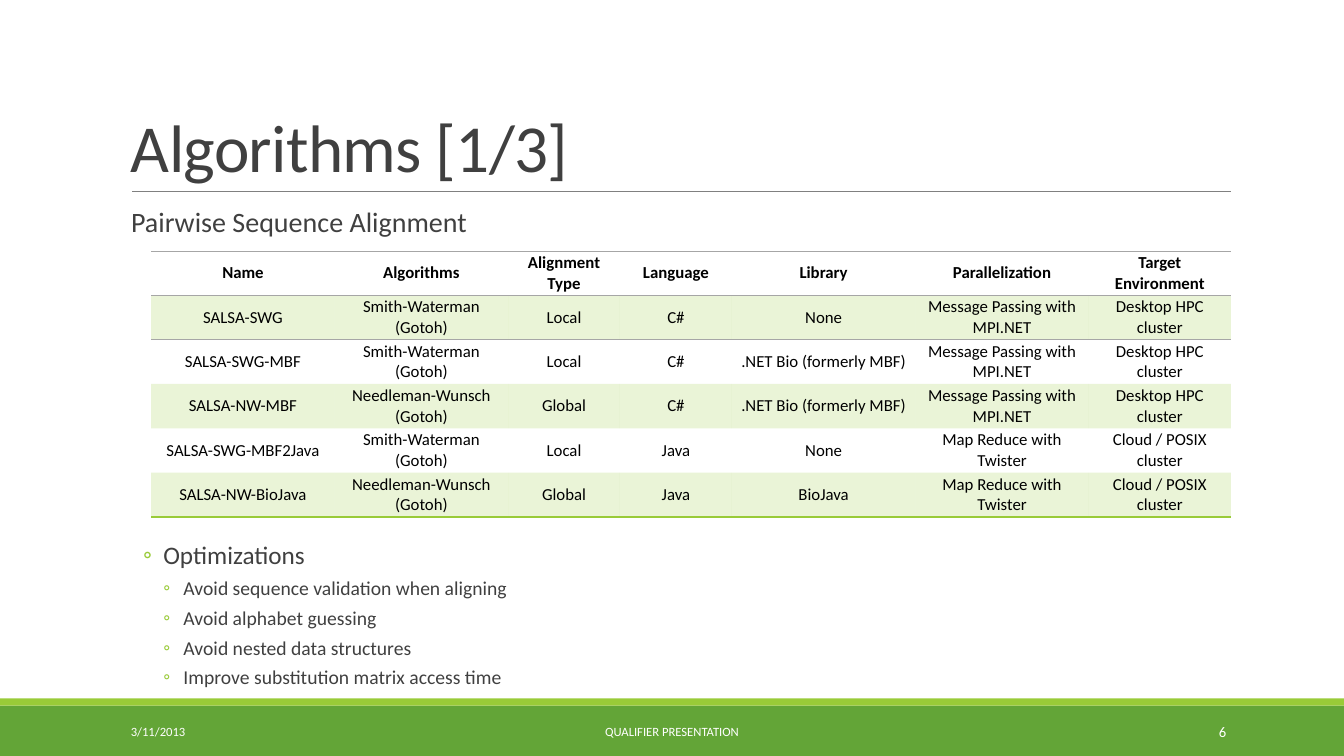
"""Build the pairwise sequence alignment algorithms slide."""
import pptx
import pptx.util
import pptx.dml.color
import pptx.enum.shapes
import pptx.enum.text
import pptx.oxml
import pptx.oxml.ns
import lxml.etree

Inches = pptx.util.Inches
Pt = pptx.util.Pt
qn = pptx.oxml.ns.qn
ALIGN = pptx.enum.text.PP_ALIGN
ANCHOR = pptx.enum.text.MSO_ANCHOR
COLORS = {"green": "63A537", "lime": "99CB38", "gray": "808080", "rule": "A6A6A6",
          "text": "404040", "black": "000000", "white": "FFFFFF"}


def add_span(para, text, size, color, bold=False):
    span = para.add_run()
    span.text = text
    span.font.name = "Calibri"
    span.font.size = Pt(size)
    span.font.bold = bold
    span.font.color.rgb = pptx.dml.color.RGBColor.from_string(COLORS[color])
    return span


def add_box(left, top, width, height, anchor, inset):
    box = page.shapes.add_textbox(Inches(left), Inches(top), Inches(width), Inches(height))
    frame = box.text_frame
    frame.word_wrap = True
    frame.vertical_anchor = anchor
    frame.margin_left = frame.margin_right = Inches(inset)
    return frame


deck = pptx.Presentation()
deck.slide_width, deck.slide_height = Inches(13.33), Inches(7.5)
page = deck.slides.add_slide(deck.slide_layouts[6])

for top, height, color in [(7, 0.5, "green"), (6.93, 0.07, "lime")]:
    band = page.shapes.add_shape(pptx.enum.shapes.MSO_SHAPE.RECTANGLE,
                                 0, Inches(top), deck.slide_width, Inches(height))
    band.shadow.inherit = False
    band.fill.solid()
    band.fill.fore_color.rgb = pptx.dml.color.RGBColor.from_string(COLORS[color])
    band.line.fill.background()

rule = page.shapes.add_connector(pptx.enum.shapes.MSO_CONNECTOR.STRAIGHT,
                                 Inches(1.31), Inches(1.9), Inches(12.21), Inches(1.9))
rule.line.color.rgb = pptx.dml.color.RGBColor.from_string(COLORS["gray"])
rule.line.width = Pt(0.5)
lxml.etree.SubElement(rule._element.spPr, qn("a:effectLst"))

title = add_box(1.2, 0.31, 11, 1.59, ANCHOR.BOTTOM, 0.1).paragraphs[0]
title.line_spacing = 0.85
span = add_span(title, "Algorithms [1/3]", 48, "text")
span.font._element.set("spc", "-50")

heading = add_box(1.3, 2.02, 10.9, 0.42, ANCHOR.TOP, 0).paragraphs[0]
heading.line_spacing = 0.9
add_span(heading, "Pairwise Sequence Alignment", 20, "text")

optimizations = [
    ("Optimizations", 18, 0.42),
    ("Avoid sequence validation when aligning", 14, 0.62),
    ("Avoid alphabet guessing", 14, 0.62),
    ("Avoid nested data structures", 14, 0.62),
    ("Improve substitution matrix access time", 14, 0.62),
]
frame = add_box(1.2, 5.34, 11, 1.56, ANCHOR.TOP, 0)
for index, (text, size, indent) in enumerate(optimizations):
    para = frame.add_paragraph() if index else frame.paragraphs[0]
    para.level = 2 if index else 1
    para.line_spacing = 0.9
    para.space_before, para.space_after = Pt(2), Pt(4)
    properties = para._p.get_or_add_pPr()
    properties.set("marL", str(Inches(indent)))
    properties.set("indent", str(Inches(-0.2)))
    bullet_color = lxml.etree.SubElement(properties, qn("a:buClr"))
    lxml.etree.SubElement(bullet_color, qn("a:srgbClr"), val=COLORS["lime"])
    lxml.etree.SubElement(properties, qn("a:buFont"), typeface="Calibri")
    lxml.etree.SubElement(properties, qn("a:buChar"), char="◦")
    add_span(para, text, size, "text")

for left, width, text, size, align in [
    (1.2, 2.7, "3/11/2013", 9, ALIGN.LEFT),
    (4.03, 5.27, "QUALIFIER PRESENTATION", 9, ALIGN.CENTER),
    (10.83, 1.43, "6", 10.5, ALIGN.RIGHT),
]:
    para = add_box(left, 7.06, width, 0.4, ANCHOR.MIDDLE, 0.1).paragraphs[0]
    para.alignment = align
    add_span(para, text, size, "white")

smith, needleman = "Smith-Waterman (Gotoh)", "Needleman-Wunsch (Gotoh)"
passing, reduce = "Message Passing with MPI.NET", "Map Reduce with Twister"
server, cloud = "Desktop HPC cluster", "Cloud / POSIX cluster"
bio = ".NET Bio (formerly MBF)"
rows = [
    ("Name", "Algorithms", "Alignment Type", "Language", "Library", "Parallelization",
     "Target Environment"),
    ("SALSA-SWG", smith, "Local", "C#", "None", passing, server),
    ("SALSA-SWG-MBF", smith, "Local", "C#", bio, passing, server),
    ("SALSA-NW-MBF", needleman, "Global", "C#", bio, passing, server),
    ("SALSA-SWG-MBF2Java", smith, "Local", "Java", "None", reduce, cloud),
    ("SALSA-NW-BioJava", needleman, "Global", "Java", "BioJava", reduce, cloud),
]
widths = [1.82, 1.72, 1.11, 1.11, 1.82, 1.72, 1.41]
borders = {0: [("a:lnT", "rule", 0.5), ("a:lnB", "rule", 0.5)],
           1: [("a:lnT", "rule", 0.5)],
           len(rows) - 1: [("a:lnB", "lime", 1)]}
holder = page.shapes.add_table(len(rows), len(widths), Inches(1.5), Inches(2.49),
                               Inches(10.7), Inches(0.44 * len(rows)))
table = holder.table
table.first_row = table.horz_banding = False
style = table._tbl.tblPr.find(qn("a:tableStyleId"))
style.text = "{2D5ABB26-0587-4C30-8999-92F81FD0307C}"
for column, width in zip(table.columns, widths):
    column.width = Inches(width)
for row_index, row in enumerate(rows):
    table.rows[row_index].height = Inches(0.44)
    for column_index, text in enumerate(row):
        cell = table.cell(row_index, column_index)
        cell.vertical_anchor = ANCHOR.MIDDLE
        cell.margin_left = cell.margin_right = Inches(0.07)
        cell.margin_top = cell.margin_bottom = 0
        properties = cell._tc.get_or_add_tcPr()
        for side, color, weight in borders.get(row_index, []):
            line = lxml.etree.SubElement(properties, qn(side), w=str(Pt(weight)))
            line_fill = lxml.etree.SubElement(line, qn("a:solidFill"))
            lxml.etree.SubElement(line_fill, qn("a:srgbClr"), val=COLORS[color])
        if row_index % 2:
            cell.fill.solid()
            cell.fill.fore_color.rgb = pptx.dml.color.RGBColor.from_string(COLORS["lime"])
            shade = properties.find(qn("a:solidFill")).find(qn("a:srgbClr"))
            lxml.etree.SubElement(shade, qn("a:alpha"), val="20000")
        else:
            cell.fill.background()
        para = cell.text_frame.paragraphs[0]
        para.alignment = ALIGN.CENTER
        para.space_after = Pt(4)
        add_span(para, text, 12, "black", bold=row_index == 0)

deck.save("out.pptx")
